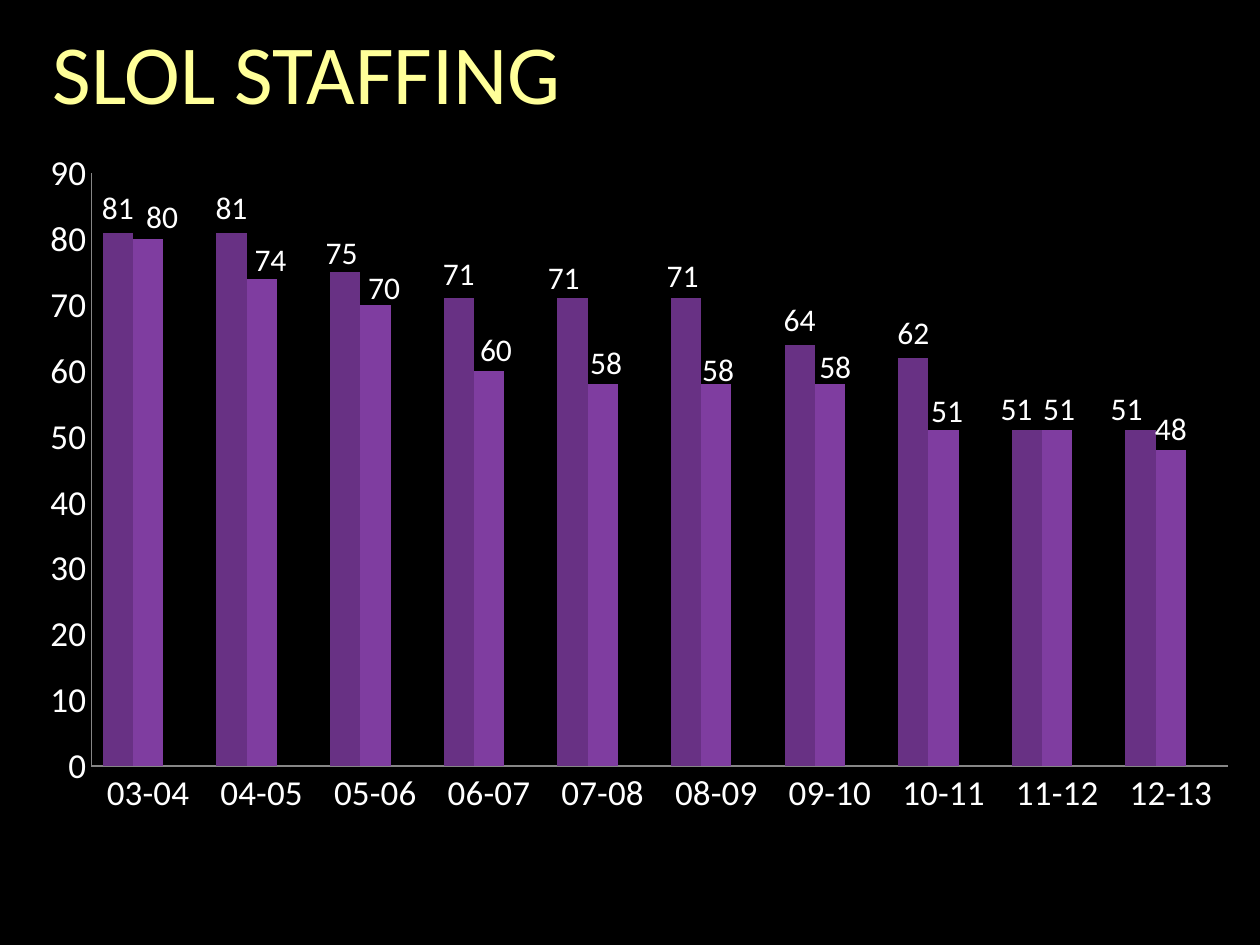
from dataclasses import dataclass

from lxml.etree import SubElement
from pptx import Presentation
from pptx.chart.data import CategoryChartData
from pptx.dml.color import RGBColor as RGB
from pptx.enum.chart import XL_CHART_TYPE as ChartType
from pptx.enum.chart import XL_LABEL_POSITION as LabelPosition
from pptx.enum.chart import XL_TICK_MARK as TickMark
from pptx.enum.text import MSO_ANCHOR as Anchor
from pptx.enum.text import MSO_AUTO_SIZE as AutoSize
from pptx.enum.text import PP_ALIGN as Align
from pptx.oxml import parse_xml
from pptx.oxml.ns import nsdecls, qn
from pptx.util import Pt


@dataclass(frozen=True)
class Theme:
    font: str = "Calibri"
    background: RGB = RGB(0, 0, 0)
    title: RGB = RGB(0xFF, 0xFF, 0x99)
    text: RGB = RGB(0xFF, 0xFF, 0xFF)
    axis: RGB = RGB(0x86, 0x86, 0x86)
    title_size: int = 48
    axis_size: int = 20
    label_size: int = 18


THEME = Theme()
TITLE = "SLOL STAFFING"
TITLE_BOX = (30, 18, 660, 52.5)
CHART_BOX = (18, 66.5, 684, 408)
PLOT_AREA = {"x": 0.05, "y": 0.08, "w": 0.95, "h": 0.83}
YEARS = ["03-04", "04-05", "05-06", "06-07", "07-08",
         "08-09", "09-10", "10-11", "11-12", "12-13"]
SERIES = [
    {"name": "Series 1", "color": RGB(0x68, 0x31, 0x84),
     "values": [81, 81, 75, 71, 71, 71, 64, 62, 51, 51],
     "label_shifts": {2: (-2, 3), 4: (-5, 2), 5: (-2, 1), 8: (-6, 2), 9: (-8, 2)}},
    {"name": "Series 2", "color": RGB(0x7F, 0x3D, 0xA0),
     "values": [80, 74, 70, 60, 58, 58, 58, 51, 51, 48],
     "label_shifts": {0: (8, 1), 1: (5, 3), 2: (5, 4), 3: (4, 2), 4: (2, 2),
                      5: (1, 6), 6: (3, 4), 7: (2, 3), 8: (1, 2), 9: (0, 2)}},
    {"name": "Series 3", "color": RGB(0xDF, 0x80, 0x45),
     "values": [None] * len(YEARS), "label_shifts": {}},
]


def style_font(font, size, color):
    font.name = THEME.font
    font.size = Pt(size)
    font.bold = False
    font.color.rgb = color


def manual_layout(settings):
    layout = parse_xml(f"<c:layout {nsdecls('c')}/>")
    manual = SubElement(layout, qn("c:manualLayout"))
    for tag, value in settings.items():
        SubElement(manual, qn(f"c:{tag}")).set("val", str(value))
    return layout


def add_title(slide):
    title = slide.shapes.title
    title.left, title.top, title.width, title.height = map(Pt, TITLE_BOX)
    frame = title.text_frame
    frame.margin_left = frame.margin_top = frame.margin_right = frame.margin_bottom = 0
    frame.word_wrap = True
    frame.auto_size = AutoSize.SHAPE_TO_FIT_TEXT
    frame.vertical_anchor = Anchor.TOP
    paragraph = frame.paragraphs[0]
    paragraph.alignment = Align.LEFT
    paragraph.line_spacing = 0.9
    run = paragraph.add_run()
    run.text = TITLE
    style_font(run.font, THEME.title_size, THEME.title)


def style_axis(axis):
    axis.has_major_gridlines = False
    axis.major_tick_mark = axis.minor_tick_mark = TickMark.NONE
    axis.format.line.color.rgb = THEME.axis
    axis.format.line.width = Pt(0.75)
    style_font(axis.tick_labels.font, THEME.axis_size, THEME.text)


def style_series(series, content):
    series.format.fill.solid()
    series.format.fill.fore_color.rgb = content["color"]
    series.invert_if_negative = False
    labels = series.data_labels
    labels.show_value = True
    labels.position = LabelPosition.OUTSIDE_END
    style_font(labels.font, THEME.label_size, THEME.text)
    for index in content["label_shifts"]:
        label = series.points[index].data_label
        style_font(label.font, THEME.label_size, THEME.text)
        label.position = LabelPosition.OUTSIDE_END
    width, height = CHART_BOX[2:]
    for element in series._element.iter(qn("c:dLbl")):
        index = element.find(qn("c:idx"))
        right, down = content["label_shifts"][int(index.get("val"))]
        index.addnext(manual_layout({"x": round(right / width, 4),
                                     "y": round(down / height, 4)}))


def add_staffing_chart(slide):
    data = CategoryChartData()
    data.categories = YEARS
    for content in SERIES:
        data.add_series(content["name"], content["values"])
    chart = slide.shapes.add_chart(
        ChartType.COLUMN_CLUSTERED, *map(Pt, CHART_BOX), data).chart
    chart.has_legend = False
    chart.has_title = False
    style_font(chart.font, THEME.label_size, THEME.text)
    style_axis(chart.category_axis)
    style_axis(chart.value_axis)
    chart.value_axis.minimum_scale = 0
    chart.value_axis.maximum_scale = 90
    chart.value_axis.major_unit = 10
    plot = chart.plots[0]
    plot.vary_by_categories = False
    plot.gap_width = 75
    plot.overlap = 0
    for series, content in zip(plot.series, SERIES):
        style_series(series, content)
    plot_area = chart._chartSpace.chart.plotArea
    for layout in plot_area.findall(qn("c:layout")):
        plot_area.remove(layout)
    plot_area.insert(0, manual_layout(
        {"layoutTarget": "inner", "xMode": "edge", "yMode": "edge", **PLOT_AREA}))


def main():
    presentation = Presentation()
    presentation.slide_width, presentation.slide_height = Pt(720), Pt(540)
    slide = presentation.slides.add_slide(presentation.slide_layouts[5])
    slide.background.fill.solid()
    slide.background.fill.fore_color.rgb = THEME.background
    add_title(slide)
    add_staffing_chart(slide)
    presentation.save("out.pptx")


if __name__ == "__main__":
    main()
